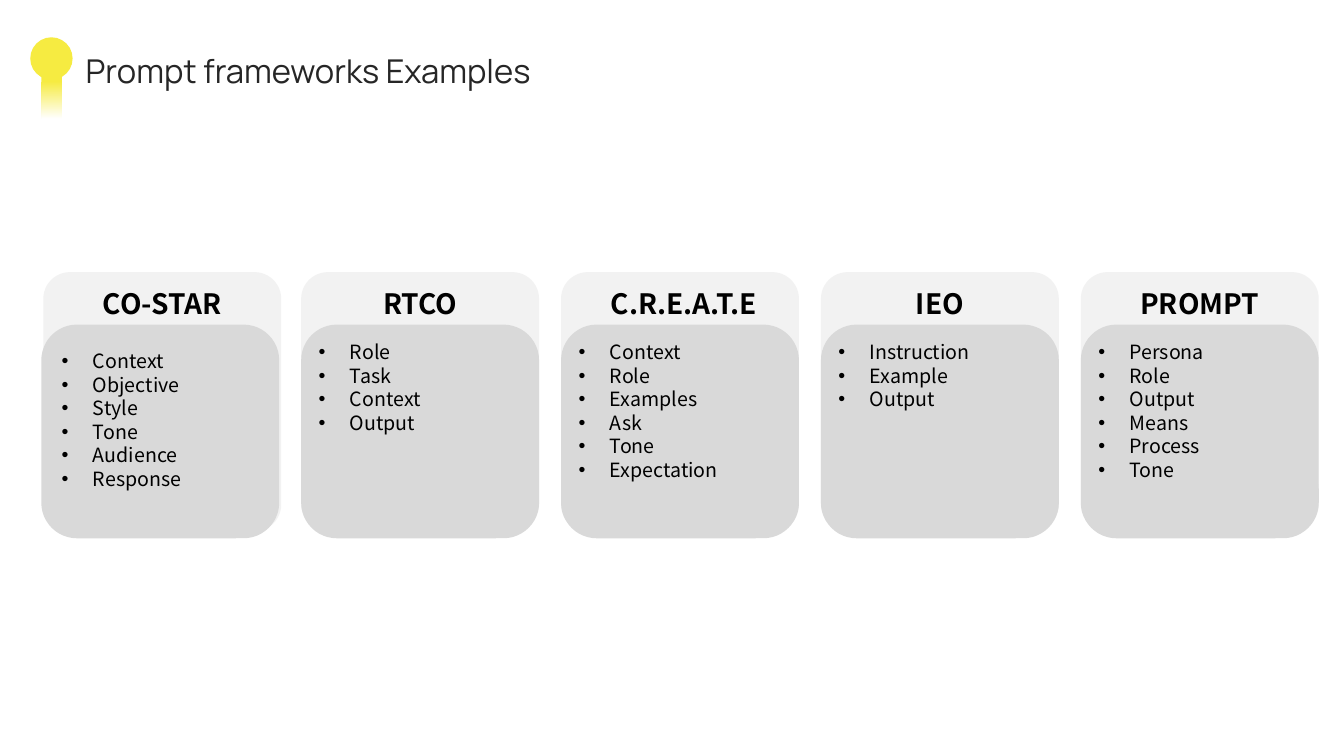
from lxml.etree import SubElement
from pptx import Presentation
from pptx.dml.color import RGBColor
from pptx.enum.shapes import MSO_SHAPE
from pptx.enum.text import MSO_ANCHOR, PP_ALIGN
from pptx.oxml.ns import qn
from pptx.util import Inches, Pt

BLACK = RGBColor(0x00, 0x00, 0x00)
CHARCOAL = RGBColor(0x26, 0x26, 0x26)
LIGHT_GREY = RGBColor(0xF2, 0xF2, 0xF2)
MID_GREY = RGBColor(0xD9, 0xD9, 0xD9)
YELLOW = RGBColor(0xF6, 0xEB, 0x41)
WHITE = RGBColor(0xFF, 0xFF, 0xFF)
CARD_FONT = "Noto Sans CJK SC"


def write_text(shape, lines, size, font=CARD_FONT, color=BLACK, bold=False,
               align=PP_ALIGN.LEFT, anchor=MSO_ANCHOR.TOP, spacing=None,
               bullet=False, insets=(0, 0, 0, 0)):
    """Fill a shape with one paragraph per line; insets are left, top, right, bottom."""
    frame = shape.text_frame
    frame.word_wrap = True
    frame.vertical_anchor = anchor
    (frame.margin_left, frame.margin_top,
     frame.margin_right, frame.margin_bottom) = map(Inches, insets)
    for index, line in enumerate(lines):
        paragraph = frame.paragraphs[0] if index == 0 else frame.add_paragraph()
        paragraph.alignment = align
        if spacing:
            paragraph.line_spacing = spacing
        if bullet:
            properties = paragraph._p.get_or_add_pPr()
            properties.set("marL", str(Inches(0.31)))
            properties.set("indent", str(-Inches(0.31)))
            SubElement(properties, qn("a:buFont"), typeface="Arial")
            SubElement(properties, qn("a:buChar"), char="•")
        run = paragraph.add_run()
        run.text = line
        run.font.name = font
        run.font.size = Pt(size)
        run.font.bold = bold
        run.font.color.rgb = color


def add_block(kind, left, top, width, height, fill=None, corner=None):
    block = slide.shapes.add_shape(
        kind, Inches(left), Inches(top), Inches(width), Inches(height))
    block.shadow.inherit = False
    block.line.fill.background()
    if fill is not None:
        block.fill.solid()
        block.fill.fore_color.rgb = fill
    if corner is not None:
        block.adjustments[0] = corner
    return block


prs = Presentation()
prs.slide_width = Inches(13.33)
prs.slide_height = Inches(7.5)
slide = prs.slides.add_slide(prs.slide_layouts[5])

title = slide.shapes.title
title.left, title.top = Inches(0.85), Inches(0.44)
title.width, title.height = Inches(11.67), Inches(0.51)
write_text(title, ["Prompt frameworks Examples"], 23.4, font="Manrope",
           color=CHARCOAL, anchor=MSO_ANCHOR.MIDDLE)

# Framework cards: name, elements, header left shift, name inset, list insets
frameworks = [
    ("CO-STAR", ["Context", "Objective", "Style", "Tone", "Audience", "Response"],
     0.02, 0.1, (0.1, 0.14)),
    ("RTCO", ["Role", "Task", "Context", "Output"], 0, 0.1, (0.07, 0.05)),
    ("C.R.E.A.T.E", ["Context", "Role", "Examples", "Ask", "Tone", "Expectation"],
     0, 0.18, (0.07, 0.05)),
    ("IEO", ["Instruction", "Example", "Output"], 0, 0.1, (0.07, 0.05)),
    ("PROMPT", ["Persona", "Role", "Output", "Means", "Process", "Tone"],
     0, 0.1, (0.07, 0.05)),
]
first_left, last_left = 0.41, 10.72
pitch = (last_left - first_left) / (len(frameworks) - 1)
for column, (name, elements, shift, name_inset, list_insets) in enumerate(frameworks):
    left = first_left + column * pitch
    header = add_block(MSO_SHAPE.ROUNDED_RECTANGLE, left + shift, 2.7, 2.36, 2.57,
                       LIGHT_GREY, 0.112)
    write_text(header, [name], 20, bold=True, align=PP_ALIGN.CENTER,
               spacing=Pt(25), insets=(name_inset, 0.05, 0.1, 0.05))
    body = add_block(MSO_SHAPE.ROUNDED_RECTANGLE, left, 3.22, 2.36, 2.12,
                     MID_GREY, 0.167)
    write_text(body, elements, 14, spacing=Pt(16.8), bullet=True,
               insets=(*list_insets, 0.07, 0.05))

# Keyhole mark beside the title
stem = add_block(MSO_SHAPE.RECTANGLE, 0.41, 0.56, 0.21, 0.62)
stem.fill.gradient()
stem.fill.gradient_angle = 270
for stop, position, color in zip(stem.fill.gradient_stops, (0.4, 1), (YELLOW, WHITE)):
    stop.position = position
    stop.color.rgb = color
add_block(MSO_SHAPE.OVAL, 0.3, 0.37, 0.42, 0.42, YELLOW)

prs.save("out.pptx")
